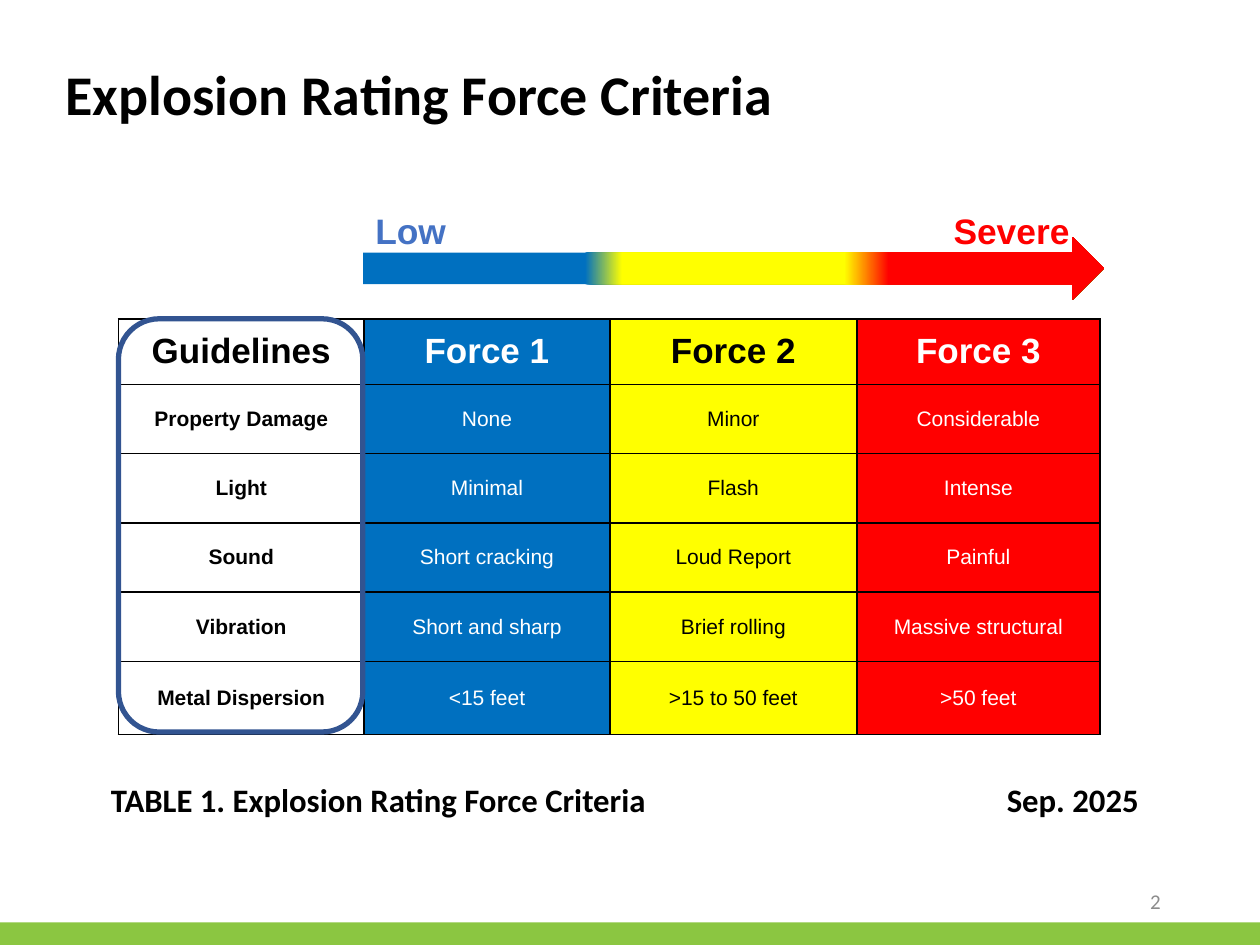
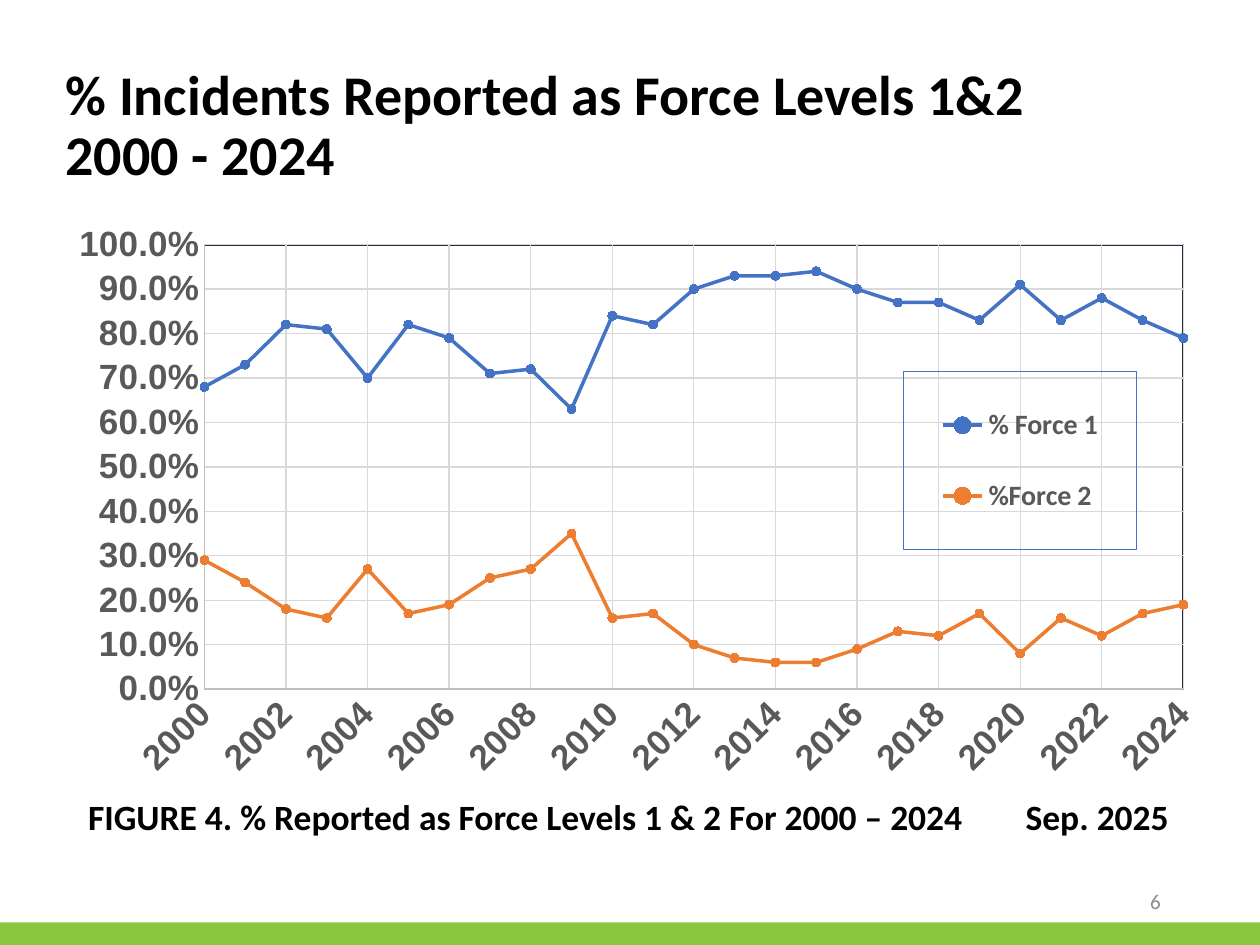
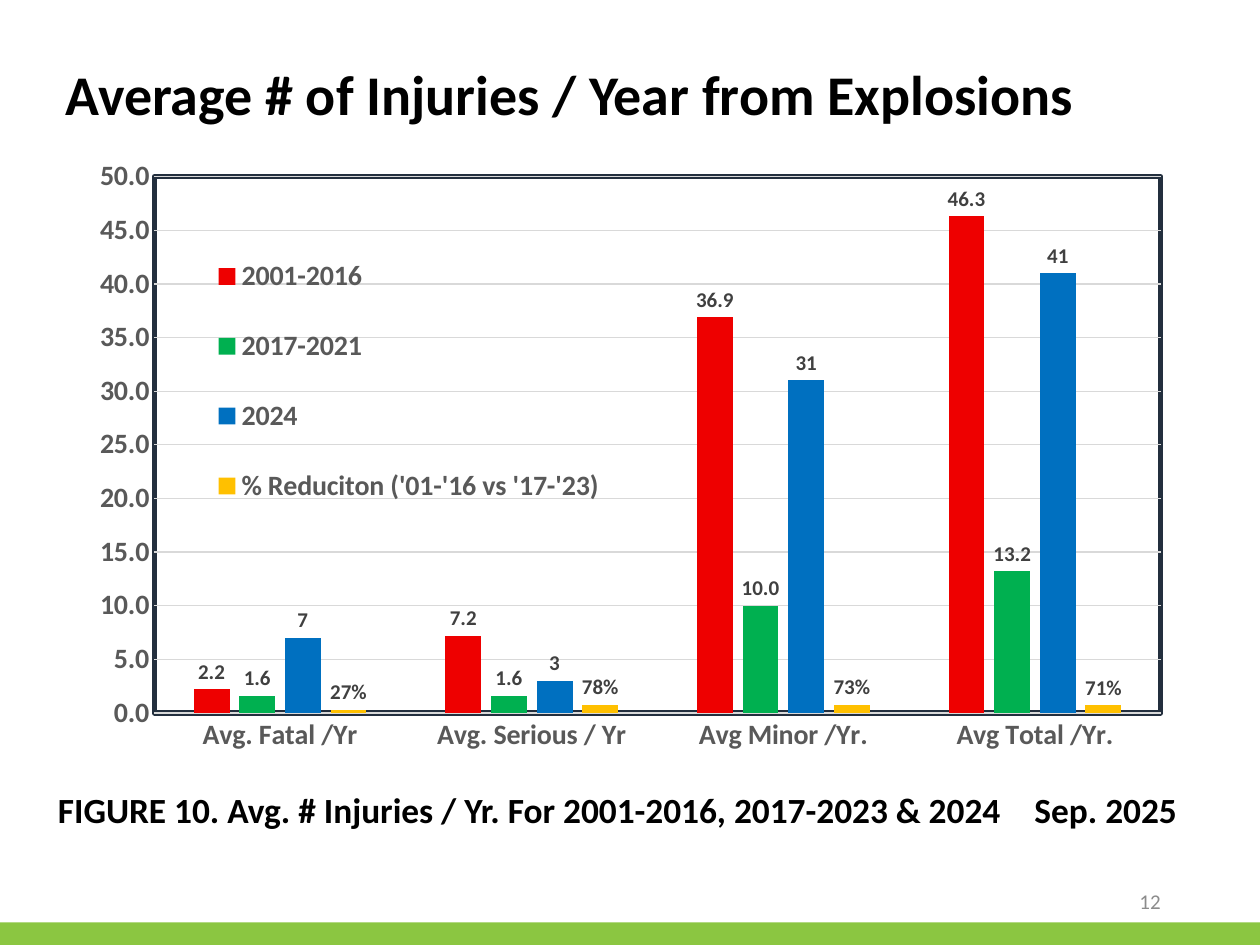
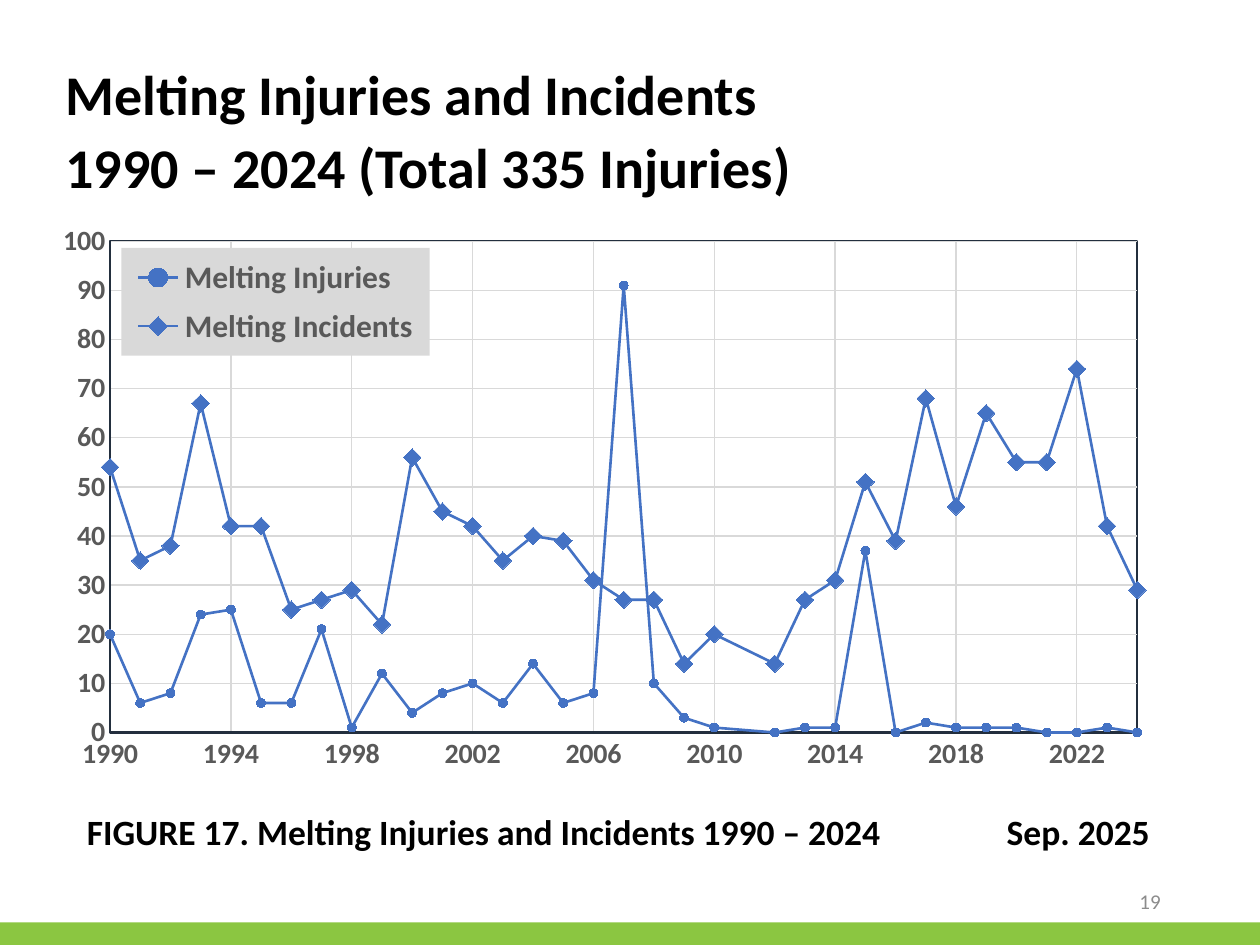
import pptx
import pptx.chart.data
import pptx.dml.color
import pptx.enum.chart
import pptx.enum.shapes
import pptx.enum.text
import pptx.oxml
import pptx.oxml.ns
import pptx.util

RGBColor = pptx.dml.color.RGBColor
BLACK = RGBColor(0x00, 0x00, 0x00)
WHITE = RGBColor(0xFF, 0xFF, 0xFF)
BAND_GREEN = RGBColor(0x8B, 0xC6, 0x41)
PAGE_GREY = RGBColor(0x8C, 0x8C, 0x8C)
LABEL_GREY = RGBColor(0x40, 0x40, 0x40)
AXIS_GREY = RGBColor(0x59, 0x59, 0x59)
LINE_GREY = RGBColor(0xBF, 0xBF, 0xBF)
GRID_GREY = RGBColor(0xD9, 0xD9, 0xD9)
FRAME_NAVY = RGBColor(0x23, 0x2F, 0x3E)
OUTLINE_BLUE = RGBColor(0x32, 0x54, 0x91)
SERIES_BLUE = RGBColor(0x44, 0x72, 0xC4)
SERIES_ORANGE = RGBColor(0xED, 0x7D, 0x31)
FORCE_BLUE = RGBColor(0x00, 0x70, 0xC0)
FORCE_YELLOW = RGBColor(0xFF, 0xFF, 0x00)
FORCE_RED = RGBColor(0xFF, 0x00, 0x00)
BAR_RED = RGBColor(0xEE, 0x00, 0x00)
BAR_GREEN = RGBColor(0x00, 0xB0, 0x50)
BAR_GOLD = RGBColor(0xFF, 0xC0, 0x00)

Inches = pptx.util.Inches
Pt = pptx.util.Pt
SHAPES = pptx.enum.shapes.MSO_SHAPE
ALIGN = pptx.enum.text.PP_ALIGN
ANCHOR = pptx.enum.text.MSO_ANCHOR
CHARTS = pptx.enum.chart.XL_CHART_TYPE
NO_TICKS = pptx.enum.chart.XL_TICK_MARK.NONE
NS = pptx.oxml.ns.nsdecls("a", "c")


def add_text(slide, box, text, size, color, bold=True, font="Calibri"):
    text_box = slide.shapes.add_textbox(*map(Inches, box))
    text_box.text_frame.word_wrap = True
    paragraph = text_box.text_frame.paragraphs[0]
    paragraph.text = text
    if "\t" not in text:
        paragraph.font.size, paragraph.font.name = Pt(size), font
        paragraph.font.bold, paragraph.font.color.rgb = bold, color
    return text_box.text_frame, paragraph


def frame_part(part, index, box, fill, line, line_width):
    for old in part.findall(pptx.oxml.ns.qn("c:layout")):
        part.remove(old)
    target = "" if index else '<c:layoutTarget val="inner"/>'
    modes = "".join(f'<c:{side}Mode val="edge"/>' for side in "xy")
    sizes = "".join(f'<c:{side} val="{share}"/>' for side, share in zip("xywh", box))
    part.insert(index, pptx.oxml.parse_xml(
        f"<c:layout {NS}><c:manualLayout>{target}{modes}{sizes}</c:manualLayout></c:layout>"))
    paints = [f'<a:solidFill><a:srgbClr val="{color}"/></a:solidFill>' if color else "<a:noFill/>"
              for color in (fill, line)]
    part.append(pptx.oxml.parse_xml(
        f'<c:spPr {NS}>{paints[0]}<a:ln w="{Pt(line_width)}">{paints[1]}</a:ln></c:spPr>'))


deck = pptx.Presentation()
deck.slide_width, deck.slide_height = Inches(10), Inches(7.5)
title_only = deck.slide_layouts[5]

pages = [
    (["Explosion Rating Force Criteria"], 7.05, "2",
     "TABLE 1. Explosion Rating Force Criteria", (0.84, 6.23, 8.31, 0.31), 18.7, 0.8, 7.11),
    (["% Incidents Reported as Force Levels 1&2\v2000 - 2024"], 8.23, "6",
     "FIGURE 4. % Reported as Force Levels 1 & 2 For 2000 – 2024", (0.66, 6.33, 8.74, 0.52), 20.3, 0.9, 7.44),
    (["Average # of Injuries / Year from Explosions"], 8.57, "12",
     "FIGURE 10. Avg. # Injuries / Yr. For 2001-2016, 2017-2023 & 2024", (0.42, 6.27, 9.22, 0.46), 20.2, 0.9, 7.75),
    (["Melting Injuries and Incidents", "1990 – 2024 (Total 335 Injuries)"], 7.94, "19",
     "FIGURE 17. Melting Injuries and Incidents 1990 – 2024", (0.65, 6.45, 8.74, 0.57), 20.3, 0.9, 7.3),
]
slides = []
for title_lines, title_width, number, caption, caption_box, caption_size, spacing, date_tab in pages:
    slide = deck.slides.add_slide(title_only)
    slides.append(slide)

    title = slide.shapes.title
    title.left, title.top, title.width, title.height = map(Inches, (0.42, 0.48, title_width, 0.52))
    title_frame = title.text_frame
    title_frame.text = "\n".join(title_lines)
    title_frame.word_wrap = True
    title_frame.auto_size = pptx.enum.text.MSO_AUTO_SIZE.NONE
    title_frame.vertical_anchor = ANCHOR.TOP
    for position, line in enumerate(title_frame.paragraphs):
        line.alignment, line.line_spacing = ALIGN.LEFT, 0.9
        line.space_before = Pt(7.5 if position else 0)
        line.font.size, line.font.name = Pt(32), "Calibri"
        line.font.bold, line.font.color.rgb = True, BLACK

    page_frame, page_line = add_text(slide, (7.06, 6.95, 2.25, 0.4), number, 12, PAGE_GREY, False)
    page_frame.vertical_anchor = ANCHOR.MIDDLE
    page_line.alignment = ALIGN.RIGHT

    caption_frame, caption_line = add_text(slide, caption_box, f"{caption}\tSep. 2025", caption_size, BLACK)
    caption_frame.margin_left = caption_frame.margin_right = Inches(0.04)
    caption_frame.margin_top = caption_frame.margin_bottom = Inches(0.02)
    caption_line.line_spacing = spacing
    caption_line.alignment = ALIGN.LEFT
    caption_line.font
    tab_list = pptx.oxml.parse_xml(
        f'<a:tabLst {NS}><a:tab pos="{Inches(date_tab)}" algn="l"/></a:tabLst>')
    caption_line.font._element.addprevious(tab_list)
    caption_line.font.size, caption_line.font.name = Pt(caption_size), "Calibri"
    caption_line.font.bold, caption_line.font.color.rgb = True, BLACK

band = slides[0].shapes.add_shape(SHAPES.RECTANGLE, 0, Inches(7.32), deck.slide_width, Inches(0.18))
band.shadow.inherit = False
band.fill.solid()
band.fill.fore_color.rgb = BAND_GREEN
band.line.fill.background()
band.element.nvSpPr.cNvPr.set("id", "99")
title_only.shapes.element.append(band.element)

criteria = slides[0].shapes
rows = [
    ("Guidelines", "Force 1", "Force 2", "Force 3"),
    ("Property Damage", "None", "Minor", "Considerable"),
    ("Light", "Minimal", "Flash", "Intense"),
    ("Sound", "Short cracking", "Loud Report", "Painful"),
    ("Vibration", "Short and sharp", "Brief rolling", "Massive structural"),
    ("Metal Dispersion", "<15 feet", ">15 to 50 feet", ">50 feet"),
]
column_styles = [(1.95, WHITE, BLACK), (1.95, FORCE_BLUE, WHITE),
                 (1.96, FORCE_YELLOW, BLACK), (1.93, FORCE_RED, WHITE)]
ratings = criteria.add_table(6, 4, *map(Inches, (0.94, 2.53, 7.79, 3.28))).table
for row, height in zip(ratings.rows, [0.52] + [0.55] * 4 + [0.58]):
    row.height = Inches(height)
for c, (width, fill, ink) in enumerate(column_styles):
    ratings.columns[c].width = Inches(width)
    for r, row in enumerate(rows):
        cell = ratings.cell(r, c)
        cell.text = row[c]
        cell.vertical_anchor = ANCHOR.MIDDLE
        cell.margin_left = cell.margin_right = Inches(0.04)
        cell.margin_top = cell.margin_bottom = Inches(0.01)
        entry = cell.text_frame.paragraphs[0]
        entry.alignment = ALIGN.CENTER
        entry.font.size, entry.font.name = Pt(12 if r else 20), "Arial"
        entry.font.bold, entry.font.color.rgb = r == 0 or c == 0, ink
        cell_properties = cell._tc.get_or_add_tcPr()
        for side in "LRTB":
            cell_properties.append(pptx.oxml.parse_xml(
                f'<a:ln{side} {NS} w="{Pt(1)}"><a:solidFill><a:srgbClr val="{BLACK}"/>'
                f"</a:solidFill></a:ln{side}>"))
        cell.fill.solid()
        cell.fill.fore_color.rgb = fill

guideline_ring = criteria.add_shape(SHAPES.ROUNDED_RECTANGLE, *map(Inches, (0.94, 2.53, 1.94, 3.28)))
guideline_ring.shadow.inherit = False
guideline_ring.fill.background()
guideline_ring.line.color.rgb = OUTLINE_BLUE
guideline_ring.line.width = Pt(3)

severity_arrow = criteria.add_shape(SHAPES.RIGHT_ARROW, *map(Inches, (2.88, 1.88, 5.88, 0.5)))
severity_arrow.shadow.inherit = False
severity_arrow.line.fill.background()
severity_arrow.fill.gradient()
severity_arrow.fill.gradient_angle = 0
stop_list = severity_arrow.element.xpath(".//a:gsLst")[0]
for old_stop in list(stop_list):
    stop_list.remove(old_stop)
for percent, color in [(30, FORCE_BLUE), (35, FORCE_YELLOW), (65, FORCE_YELLOW), (71, FORCE_RED)]:
    stop_list.append(pptx.oxml.parse_xml(
        f'<a:gs {NS} pos="{percent * 1000}"><a:srgbClr val="{color}"/></a:gs>'))

for left, severity, color in [(2.88, "Low", SERIES_BLUE), (7.47, "Severe", FORCE_RED)]:
    add_text(slides[0], (left, 1.61, 1.25, 0.44), severity, 20.2, color, font="Arial")

force_shares = pptx.chart.data.XyChartData()
melting = pptx.chart.data.XyChartData()
force_years = range(2000, 2025)
melting_years = [year for year in range(1990, 2025) if year != 2011]
for chart_data, years, name, values in [
    (force_shares, force_years, "% Force 1",
     [0.68, 0.73, 0.82, 0.81, 0.7, 0.82, 0.79, 0.71, 0.72, 0.63, 0.84, 0.82, 0.9,
      0.93, 0.93, 0.94, 0.9, 0.87, 0.87, 0.83, 0.91, 0.83, 0.88, 0.83, 0.79]),
    (force_shares, force_years, "%Force 2",
     [0.29, 0.24, 0.18, 0.16, 0.27, 0.17, 0.19, 0.25, 0.27, 0.35, 0.16, 0.17, 0.1,
      0.07, 0.06, 0.06, 0.09, 0.13, 0.12, 0.17, 0.08, 0.16, 0.12, 0.17, 0.19]),
    (melting, melting_years, "Melting Injuries",
     [20, 6, 8, 24, 25, 6, 6, 21, 1, 12, 4, 8, 10, 6, 14, 6, 8,
      91, 10, 3, 1, 0, 1, 1, 37, 0, 2, 1, 1, 1, 0, 0, 1, 0]),
    (melting, melting_years, "Melting Incidents",
     [54, 35, 38, 67, 42, 42, 25, 27, 29, 22, 56, 45, 42, 35, 40, 39, 31,
      27, 27, 14, 20, 14, 27, 31, 51, 39, 68, 46, 65, 55, 55, 74, 42, 29]),
]:
    points = chart_data.add_series(name)
    for year, value in zip(years, values):
        points.add_data_point(year, value)

injuries = pptx.chart.data.CategoryChartData()
injuries.categories = ["Avg. Fatal /Yr", "Avg. Serious / Yr", "Avg Minor /Yr.", "Avg Total /Yr."]
injuries.add_series("2001-2016", [2.2, 7.2, 36.9, 46.3])
injuries.add_series("2017-2021", [1.6, 1.6, 10, 13.2])
injuries.add_series("2024", [7, 3, 31, 41])
injuries.add_series("% Reduciton ('01-'16 vs '17-'23)", [0.27, 0.78, 0.73, 0.71])

charts = []
for slide, kind, data, box, plot_box, frame_width, legend_box, legend_fill, legend_line, legend_size, \
        axis_font, axis_size, top, step, number_format, x_line, y_line, line_width in [
    (slides[1], CHARTS.XY_SCATTER_LINES, force_shares, (0.42, 1.69, 9.25, 5.04),
     (0.13, 0.05, 0.84, 0.7), 1, (0.73, 0.25, 0.2, 0.28), None, SERIES_BLUE, 16,
     "Arial", 20, 1, 0.1, "0.0%", LINE_GREY, LINE_GREY, 0.75),
    (slides[2], CHARTS.COLUMN_CLUSTERED, injuries, (0.61, 1.19, 8.78, 5.32),
     (0.07, 0.04, 0.91, 0.8), 3, (0.11, 0.11, 0.38, 0.47), None, None, 16,
     "Calibri", 16, 50, 5, "0.0", GRID_GREY, None, 0.75),
    (slides[3], CHARTS.XY_SCATTER_LINES, melting, (0.42, 1.78, 9.06, 5.37),
     (0.05, 0.02, 0.9, 0.73), 1.25, (0.06, 0.03, 0.27, 0.16), GRID_GREY, None, 18,
     "Calibri", 16, 100, 10, "0", FRAME_NAVY, FRAME_NAVY, 1.25),
]:
    chart = slide.shapes.add_chart(kind, *map(Inches, box), data).chart
    charts.append(chart)
    chart.has_title = False
    chart.font.size, chart.font.name, chart.font.color.rgb = Pt(10), "Calibri", BLACK
    chart.plots[0].vary_by_categories = False

    for axis, axis_line in [(chart.category_axis, x_line), (chart.value_axis, y_line)]:
        axis.major_tick_mark = axis.minor_tick_mark = NO_TICKS
        axis_text = axis.tick_labels.font
        axis_text.size, axis_text.name = Pt(axis_size), axis_font
        axis_text.bold, axis_text.color.rgb = True, AXIS_GREY
        if axis_line:
            axis.format.line.color.rgb = axis_line
            axis.format.line.width = Pt(line_width)
        else:
            axis.format.line.fill.background()
        axis.has_major_gridlines = axis is not chart.category_axis
    chart.category_axis.has_major_gridlines = kind == CHARTS.XY_SCATTER_LINES
    for axis in (chart.category_axis, chart.value_axis):
        if axis.has_major_gridlines:
            axis.major_gridlines.format.line.color.rgb = GRID_GREY
            axis.major_gridlines.format.line.width = Pt(0.75)
    value_axis = chart.value_axis
    value_axis.minimum_scale, value_axis.maximum_scale, value_axis.major_unit = 0, top, step
    value_axis.tick_labels.number_format = number_format
    value_axis.tick_labels.number_format_is_linked = False

    chart.has_legend = True
    chart.legend.position = pptx.enum.chart.XL_LEGEND_POSITION.BOTTOM
    chart.legend.include_in_layout = False
    frame_part(chart.element.xpath(".//c:plotArea")[0], 0, plot_box, None, FRAME_NAVY, frame_width)
    frame_part(chart.element.xpath(".//c:legend")[0], 1, legend_box, legend_fill, legend_line, 0.75)
    legend_text = chart.legend.font
    legend_text.size, legend_text.name = Pt(legend_size), "Calibri"
    legend_text.bold, legend_text.color.rgb = True, AXIS_GREY

force_chart, injury_chart, melting_chart = charts
for chart, first_year, year_step in [(force_chart, 2000, 2), (melting_chart, 1990, 4)]:
    year_axis = chart.category_axis
    year_axis.minimum_scale, year_axis.maximum_scale = first_year, 2024
    year_axis.major_unit = year_step
    year_axis.tick_labels.number_format = "0"
    year_axis.tick_labels.number_format_is_linked = False
force_chart.element.xpath(".//c:valAx[1]/c:txPr/a:bodyPr")[0].set("rot", "-2700000")

CIRCLE = pptx.enum.chart.XL_MARKER_STYLE.CIRCLE
DIAMOND = pptx.enum.chart.XL_MARKER_STYLE.DIAMOND
for chart, position, color, width, marker_style, marker_size in [
    (force_chart, 0, SERIES_BLUE, 2, CIRCLE, 5),
    (force_chart, 1, SERIES_ORANGE, 2, CIRCLE, 5),
    (melting_chart, 0, SERIES_BLUE, 1.5, CIRCLE, 5),
    (melting_chart, 1, SERIES_BLUE, 1.5, DIAMOND, 10),
]:
    trend = chart.plots[0].series[position]
    trend.format.line.color.rgb = color
    trend.format.line.width = Pt(width)
    trend.marker.style, trend.marker.size = marker_style, marker_size
    trend.marker.format.fill.solid()
    trend.marker.format.fill.fore_color.rgb = color
    trend.marker.format.line.color.rgb = color

injury_chart.plots[0].gap_width = 219
injury_chart.plots[0].overlap = -27
for bars, color, label_format in zip(injury_chart.plots[0].series,
                                     [BAR_RED, BAR_GREEN, FORCE_BLUE, BAR_GOLD],
                                     ["0.0", "0.0", "0", "0%"]):
    bars.invert_if_negative = False
    bars.format.fill.solid()
    bars.format.fill.fore_color.rgb = color
    labels = bars.data_labels
    labels.show_value = True
    labels.number_format, labels.number_format_is_linked = label_format, False
    labels.position = pptx.enum.chart.XL_LABEL_POSITION.OUTSIDE_END
    labels.font.size, labels.font.name = Pt(12), "Calibri"
    labels.font.bold, labels.font.color.rgb = True, LABEL_GREY

deck.save("out.pptx")
